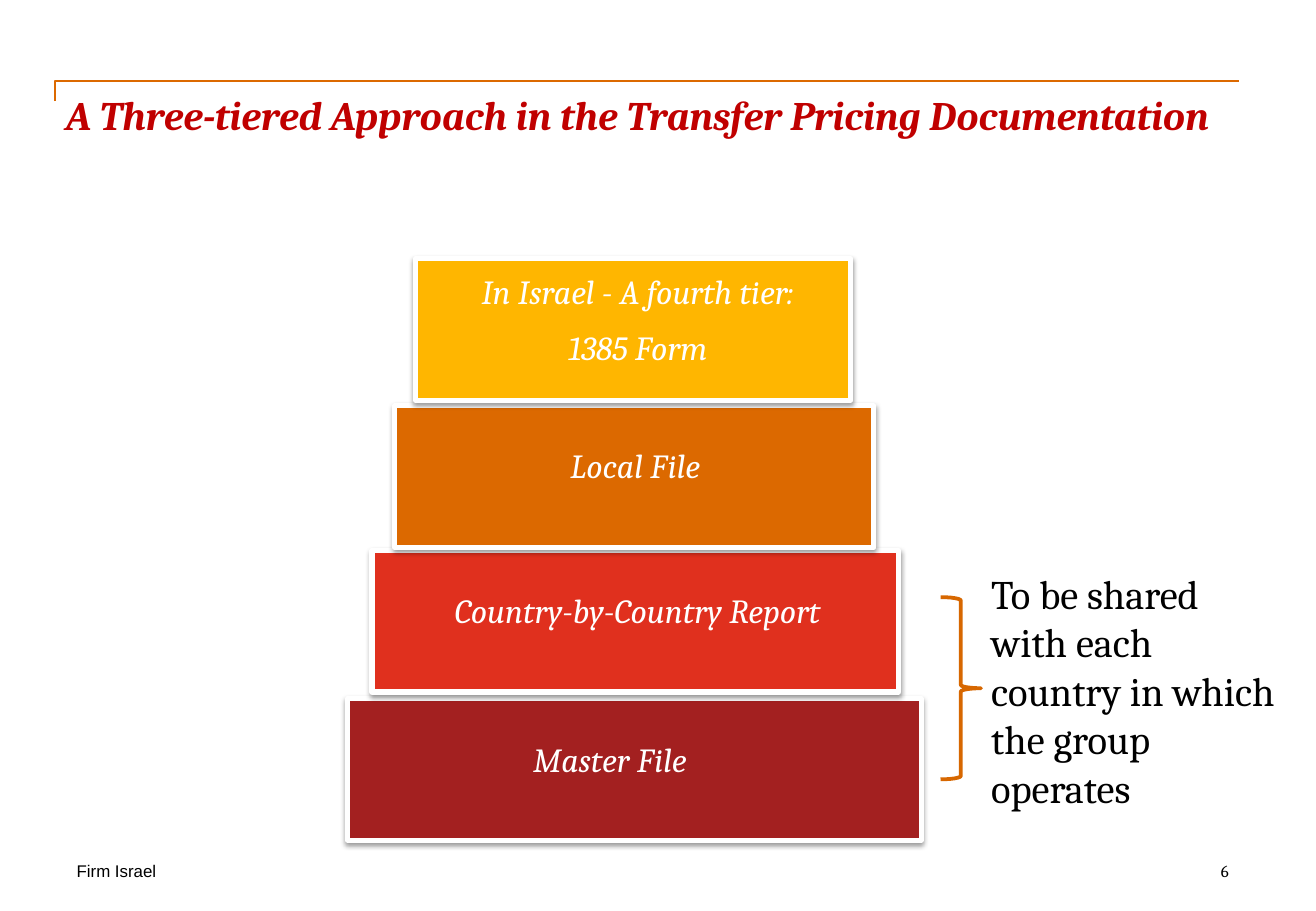
from dataclasses import dataclass

from lxml.etree import SubElement
from pptx import Presentation
from pptx.dml.color import RGBColor
from pptx.enum.shapes import MSO_SHAPE as Shape
from pptx.enum.text import MSO_ANCHOR as Anchor, PP_ALIGN as Align
from pptx.oxml.ns import qn
from pptx.util import Pt


@dataclass(frozen=True)
class Theme:
    serif: str = "Cambria"
    sans: str = "Arial"
    black: str = "000000"
    white: str = "FFFFFF"
    title: str = "C00000"
    frame: str = "DC6900"
    brace: str = "D76700"
    yellow: str = "FFB600"
    orange: str = "DC6900"
    red: str = "E0301E"
    dark_red: str = "A32020"
    large: int = 24
    medium: int = 20
    small: int = 10


class SlideBuilder:
    def __init__(self, slide, theme):
        self.shapes = slide.shapes
        self.theme = theme

    def text(self, left, top, width, height, lines, size, color=None, font=None,
             align=Align.LEFT, bold=False, italic=False, space_after=0):
        box = self.shapes.add_textbox(Pt(left), Pt(top), Pt(width), Pt(height))
        frame = box.text_frame
        frame.word_wrap = True
        frame.vertical_anchor = Anchor.TOP
        frame.margin_left = frame.margin_right = 0
        frame.margin_top = frame.margin_bottom = 0
        for index, line in enumerate(lines):
            para = frame.add_paragraph() if index else frame.paragraphs[0]
            para.alignment = align
            para.space_after = Pt(space_after)
            span = para.add_run()
            span.text = line
            span.font.name = font or self.theme.serif
            span.font.size = Pt(size)
            span.font.bold = bold
            span.font.italic = italic
            span.font.color.rgb = RGBColor.from_string(color or self.theme.black)

    def outline(self, shape, color, width):
        shape.shadow.inherit = False
        shape.line.color.rgb = RGBColor.from_string(color)
        shape.line.width = Pt(width)

    def tier(self, left, top, width, height, color):
        box = self.shapes.add_shape(Shape.RECTANGLE, Pt(left), Pt(top), Pt(width), Pt(height))
        self.outline(box, self.theme.white, 3)
        box.fill.solid()
        box.fill.fore_color.rgb = RGBColor.from_string(color)
        self.soft_shadow(box)

    def soft_shadow(self, shape):
        """Drop a blurred, 38 % black shadow straight down."""
        effects = shape.element.spPr.find(qn("a:effectLst"))
        shadow = SubElement(effects, qn("a:outerShdw"), blurRad=str(Pt(3.1)),
                            dist=str(Pt(1.6)), dir="5400000", rotWithShape="0")
        black = SubElement(shadow, qn("a:srgbClr"), val=self.theme.black)
        SubElement(black, qn("a:alpha"), val="38000")

    def brace(self, left, top, width, height):
        brace = self.shapes.add_shape(Shape.RIGHT_BRACE, Pt(left), Pt(top), Pt(width), Pt(height))
        self.outline(brace, self.theme.brace, 2.25)
        brace.fill.background()

    def title_frame(self, left, top, right, bottom):
        builder = self.shapes.build_freeform(Pt(left), Pt(bottom))
        builder.add_line_segments([(Pt(left), Pt(top)), (Pt(right), Pt(top))], close=False)
        corner = builder.convert_to_shape()
        self.outline(corner, self.theme.frame, 1)
        corner.fill.background()


def main():
    theme = Theme()
    deck = Presentation()
    deck.slide_width, deck.slide_height = Pt(780), Pt(540)
    page = SlideBuilder(deck.slides.add_slide(deck.slide_layouts[6]), theme)

    page.title_frame(32.6, 48.2, 734.4, 60)
    page.text(39, 53.5, 689, 72,
              ["A Three-tiered Approach in the Transfer Pricing Documentation"],
              theme.large, theme.title, bold=True, italic=True)

    # Bottom to top: tier left, top, width, colour; label left, top, width, alignment, lines
    tiers = [
        (206, 414, 340, theme.dark_red, 316, 438, 180, Align.LEFT, ["Master File"]),
        (220.5, 326.2, 312, theme.red, 223, 349.3, 310, Align.CENTER,
         ["Country-by-Country Report"]),
        (234, 240.6, 284, theme.orange, 286.6, 263.5, 180, Align.CENTER, ["Local File"]),
        (246.3, 153.4, 258, theme.yellow, 216, 160.6, 324, Align.CENTER,
         ["In Israel - A fourth tier:", "1385 Form"]),
    ]
    for left, top, width, color, label_left, label_top, label_width, align, lines in tiers:
        page.tier(left, top, width, 84, color)
        page.text(label_left, label_top, label_width, 50, lines, theme.medium,
                  theme.white, align=align, italic=True, space_after=9)

    page.brace(557.5, 354, 24, 108)
    page.text(587.5, 337, 169, 110,
              ["To be shared with each country in which the group operates"],
              theme.large, space_after=9)

    page.text(45.5, 510, 221, 12, ["Firm Israel"], theme.small, font=theme.sans)
    page.text(723.6, 510, 31.5, 24, ["6"], theme.small)

    deck.save("out.pptx")


if __name__ == "__main__":
    main()
